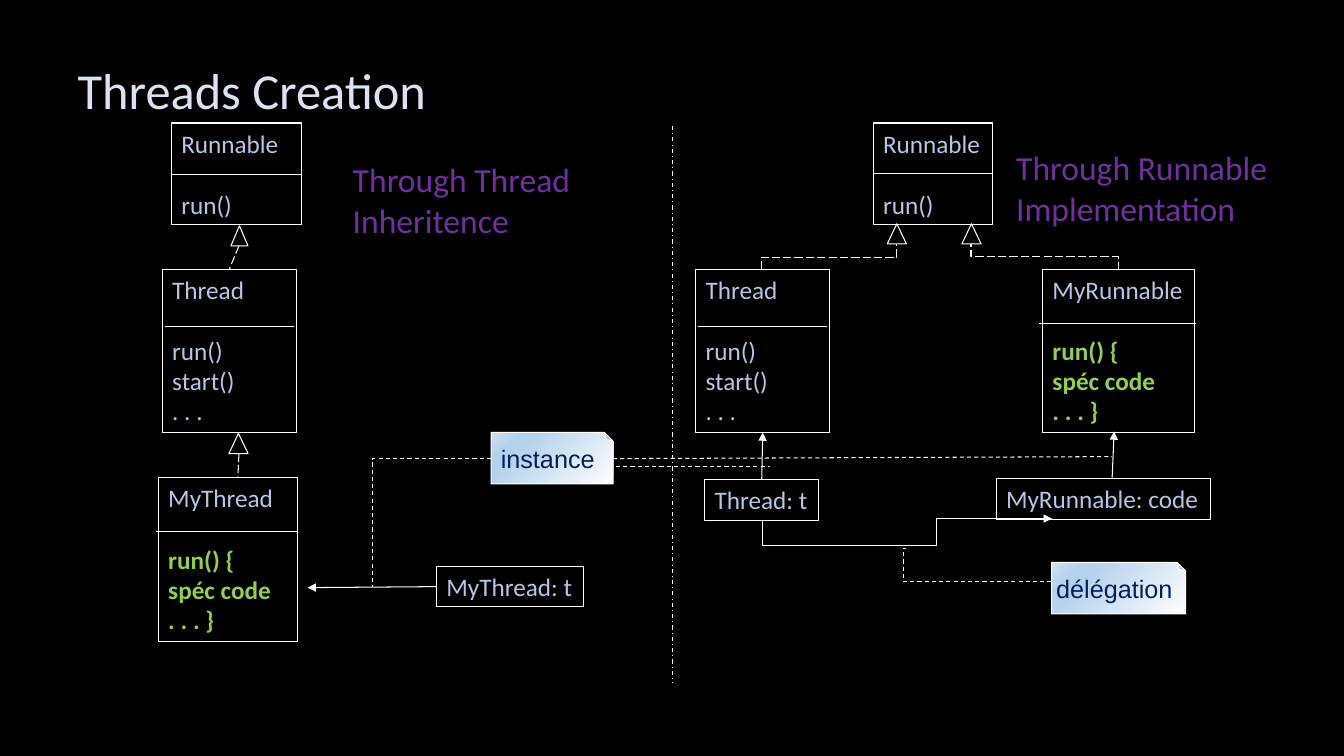
import pptx
import pptx.util
import pptx.dml.color
import pptx.enum.dml
import pptx.enum.shapes
import pptx.enum.text
import pptx.oxml
import pptx.oxml.ns
from lxml import etree

Inches = pptx.util.Inches
Pt = pptx.util.Pt
qn = pptx.oxml.ns.qn
SHAPE = pptx.enum.shapes.MSO_SHAPE
CONNECTOR = pptx.enum.shapes.MSO_CONNECTOR
DASH = pptx.enum.dml.MSO_LINE
ANCHOR = pptx.enum.text.MSO_ANCHOR
ALIGN = pptx.enum.text.PP_ALIGN
AUTO = pptx.enum.text.MSO_AUTO_SIZE

COLORS = {
    "background": "000000", "title": "DAE3F3", "line": "FFFFFF",
    "text": "B4C7E7", "code": "92D050", "heading": "7030A0", "note": "002060",
}
NOTE_STOPS = [(0, "FFFFFF"), (74, "B5D2EC"), (83, "B5D2EC"), (100, "CEE1F2")]
METHODS = ["run()", "start()", ". . ."]
OVERRIDE = ["run() {", "spéc code", ". . . }"]


def rgb(name):
    return pptx.dml.color.RGBColor.from_string(COLORS[name])


def add_run(p, text, size, color, font="Calibri", bold=False):
    r = p.add_run()
    r.text = text
    r.font.name = font
    r.font.size = Pt(size)
    r.font.bold = bold
    r.font.color.rgb = rgb(color)


def outlined(s, kind, x, y, w, h):
    sp = s.shapes.add_shape(kind, Inches(x), Inches(y), Inches(w), Inches(h))
    sp.shadow.inherit = False
    sp.fill.background()
    sp.line.color.rgb = rgb("line")
    sp.line.width = Pt(0.75)
    return sp


def fit_text(sp):
    tf = sp.text_frame
    tf.word_wrap = False
    tf.auto_size = AUTO.SHAPE_TO_FIT_TEXT
    tf.vertical_anchor = ANCHOR.TOP
    return tf


def style_line(c, dash=None, arrow=False):
    c.line.color.rgb = rgb("line")
    c.line.width = Pt(0.75)
    if dash:
        c.line.dash_style = dash
    if arrow:
        etree.SubElement(c.line._get_or_add_ln(), qn("a:tailEnd"), type="triangle")
    etree.SubElement(c._element.spPr, qn("a:effectLst"))


def straight(s, x1, y1, x2, y2, dash=None, arrow=False):
    c = s.shapes.add_connector(CONNECTOR.STRAIGHT, Inches(x1), Inches(y1), Inches(x2), Inches(y2))
    style_line(c, dash, arrow)
    return c


def elbow(s, x, y, w, h, rot, flips="", bends=3, adj=(), dash=None, arrow=False):
    c = s.shapes.add_connector(CONNECTOR.ELBOW, Inches(x), Inches(y), Inches(x + w), Inches(y + h))
    xfrm = c._element.spPr.find(qn("a:xfrm"))
    xfrm.set("rot", str(rot * 60000))
    for flip in flips:
        xfrm.set("flip" + flip, "1")
    geom = c._element.spPr.find(qn("a:prstGeom"))
    geom.set("prst", f"bentConnector{bends}")
    guides = geom.find(qn("a:avLst"))
    for i, value in enumerate(adj, 1):
        etree.SubElement(guides, qn("a:gd"), name=f"adj{i}" if len(adj) > 1 else "adj1",
                         fmla=f"val {round(value * 100000)}")
    style_line(c, dash, arrow)
    return c


def class_box(s, x, y, w, h, name, members, rule, override=False):
    sp = outlined(s, SHAPE.RECTANGLE, x, y, w, h)
    tf = fit_text(sp)
    p = tf.paragraphs[0]
    p.alignment = ALIGN.LEFT
    p.space_after = Pt(22)
    add_run(p, name, 18, "text")
    for member in members:
        p = tf.add_paragraph()
        p.alignment = ALIGN.LEFT
        add_run(p, member, 18, "code" if override else "text", bold=override)
    start, end, drop = rule
    straight(s, x + end, y + drop, x + start, y + drop)
    return sp


def object_box(s, x, y, w, text):
    sp = outlined(s, SHAPE.RECTANGLE, x, y, w, 0.4)
    p = fit_text(sp).paragraphs[0]
    p.alignment = ALIGN.LEFT
    add_run(p, text, 18, "text")
    return sp


def triangle(s, x, y, w=0.19):
    return outlined(s, SHAPE.ISOSCELES_TRIANGLE, x, y, w, 0.2)


def heading(s, x, y, w, lines):
    tb = s.shapes.add_textbox(Inches(x), Inches(y), Inches(w), Inches(0.91))
    tf = fit_text(tb)
    for i, line in enumerate(lines):
        p = tf.add_paragraph() if i else tf.paragraphs[0]
        add_run(p, line, 24, "heading")


def note(s, x, y, h, text):
    sp = outlined(s, SHAPE.FOLDED_CORNER, x, y, 0.51, h)
    sp.rotation = 270
    sp.fill.gradient()
    grad = sp._element.spPr.find(qn("a:gradFill"))
    for child in list(grad):
        grad.remove(child)
    grad.set("rotWithShape", "1")
    stops = etree.SubElement(grad, qn("a:gsLst"))
    for pos, color in NOTE_STOPS:
        gs = etree.SubElement(stops, qn("a:gs"), pos=str(pos * 1000))
        etree.SubElement(gs, qn("a:srgbClr"), val=color)
    etree.SubElement(grad, qn("a:lin"), ang=str(315 * 60000), scaled="0")
    tf = sp.text_frame
    tf.margin_left = tf.margin_right = tf.margin_top = tf.margin_bottom = 0
    tf.word_wrap = True
    tf.vertical_anchor = ANCHOR.MIDDLE
    tf._txBody.bodyPr.set("vert", "vert")
    p = tf.paragraphs[0]
    p.alignment = ALIGN.CENTER
    add_run(p, text, 18, "note", "Arial")


def title(s, x, y, w, h):
    sp = s.shapes.title
    sp.left, sp.top, sp.width, sp.height = Inches(x), Inches(y), Inches(w), Inches(h)
    tf = sp.text_frame
    tf.word_wrap = True
    tf.vertical_anchor = ANCHOR.MIDDLE
    p = tf.paragraphs[0]
    p.alignment = ALIGN.LEFT
    p.line_spacing = 0.9
    add_run(p, "Threads Creation", 36, "title")


def inheritance(s, x, y):
    class_box(s, x + 0.15, y, 1.29, 1.01, "Runnable", ["run()"], (0, 1.3, 0.51))
    thread = class_box(s, x + 0.06, y + 1.45, 1.33, 1.62, "Thread", METHODS, (0.03, 1.31, 0.57))
    class_box(s, x + 0.02, y + 3.52, 1.38, 1.62, "MyThread", OVERRIDE, (-0.02, 1.39, 0.53), True)
    instance = object_box(s, x + 2.78, y + 4.4, 1.46, "MyThread: t")
    triangle(s, x + 0.74, y + 1.02, 0.17)
    c = straight(s, x + 0.82, y + 1.22, x + 0.73, y + 1.45, DASH.LONG_DASH)
    c.end_connect(thread, 0)
    triangle(s, x + 0.72, y + 3.08)
    straight(s, x + 0.82, y + 3.28, x + 0.81, y + 3.51, DASH.LONG_DASH)
    c = straight(s, x + 2.78, y + 4.6, x + 1.5, y + 4.61, arrow=True)
    c.begin_connect(instance, 1)
    heading(s, x + 1.85, y + 0.31, 2.38, ["Through Thread", "Inheritence"])


def implementation(s, x, y):
    class_box(s, x + 1.76, y, 1.18, 1.01, "Runnable", ["run()"], (0, 1.18, 0.5))
    thread = class_box(s, x, y + 1.45, 1.33, 1.62, "Thread", METHODS, (0.02, 1.3, 0.57))
    class_box(s, x + 3.44, y + 1.45, 1.51, 1.62, "MyRunnable", OVERRIDE, (-0.03, 1.52, 0.54), True)
    instance = object_box(s, x + 0.09, y + 3.54, 1.13, "Thread: t")
    object_box(s, x + 2.98, y + 3.53, 2.13, "MyRunnable: code")
    for dx in (1.9, 2.64):
        triangle(s, x + dx, y + 1)
    c = straight(s, x + 0.66, y + 3.54, x + 0.66, y + 3.07, arrow=True)
    c.begin_connect(instance, 0)
    c.end_connect(thread, 2)
    straight(s, x + 4.13, y + 3.53, x + 4.15, y + 3.06, arrow=True)
    elbow(s, x + 3.33, y + 0.6, 0.26, 1.46, 270, "V", dash=DASH.LONG_DASH)
    elbow(s, x + 1.2, y + 0.66, 0.25, 1.34, 90, "HV", dash=DASH.LONG_DASH)
    elbow(s, x + 2.09, y + 2.5, 0.02, 2.87, 90, "HV", 4, (-12.5, 0.6), arrow=True)
    heading(s, x + 3.08, y + 0.19, 2.72, ["Through Runnable", "Implementation"])


def annotations(s, x, y):
    note(s, x + 1.53, y, 1.21, "instance")
    note(s, x + 7.15, y + 1.23, 1.33, "délégation")
    elbow(s, x, y + 0.61, 1.18, 1.27, 180, "V", 2, dash=DASH.DASH)
    straight(s, x + 2.39, y + 0.61, x + 7.34, y + 0.59, DASH.DASH)
    straight(s, x + 2.42, y + 0.69, x + 3.95, y + 0.69, DASH.DASH)
    elbow(s, x + 5.3, y + 1.5, 1.44, 0.33, 180, adj=(1.02,), dash=DASH.DASH)


def main():
    prs = pptx.Presentation()
    prs.slide_width, prs.slide_height = Inches(13.33), Inches(7.5)
    s = prs.slides.add_slide(prs.slide_layouts[5])
    s.background.fill.solid()
    s.background.fill.fore_color.rgb = rgb("background")
    title(s, 0.67, 0.6, 12, 0.64)
    inheritance(s, 1.55, 1.22)
    implementation(s, 6.9, 1.22)
    annotations(s, 3.69, 3.94)
    straight(s, 6.67, 1.25, 6.67, 6.78, DASH.DASH_DOT)
    prs.save("out.pptx")


if __name__ == "__main__":
    main()
